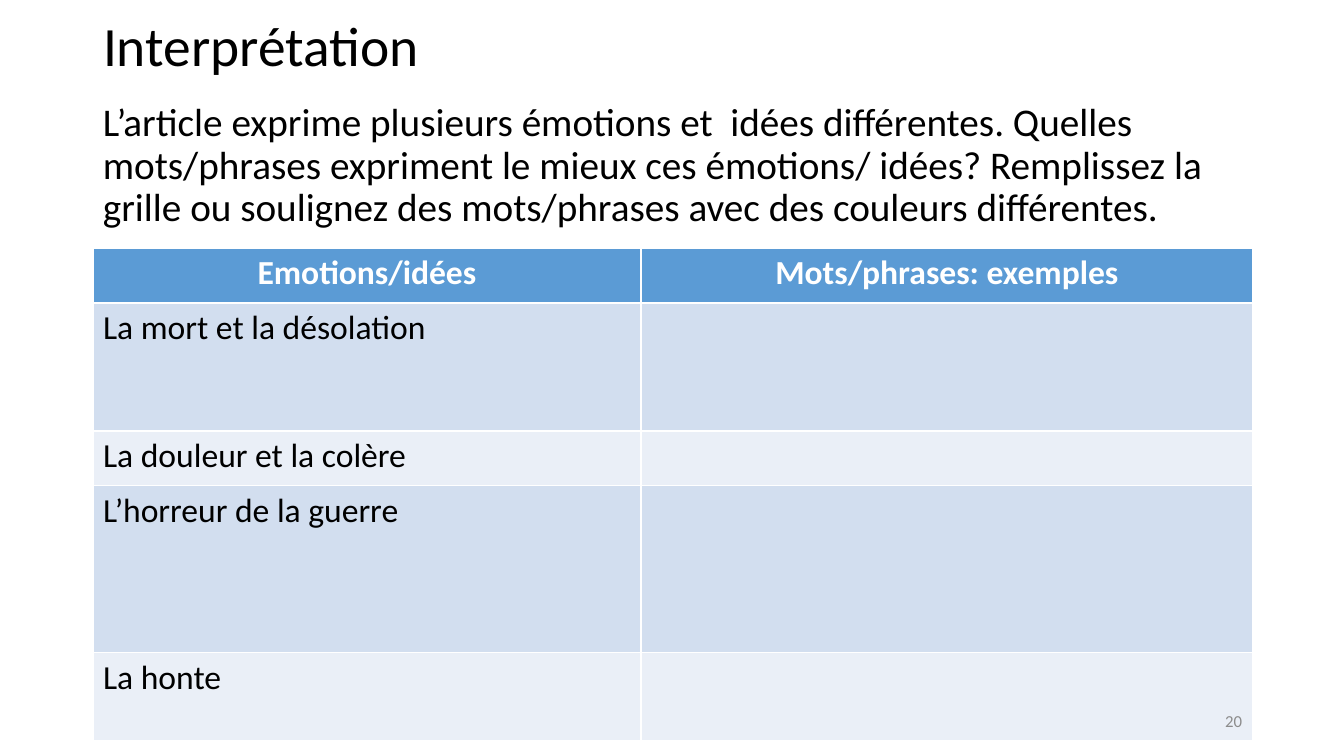
import pptx
import pptx.util
import pptx.dml.color
import pptx.enum.text
from dataclasses import dataclass

# Content
TITLE = "Interprétation"
TASK = (
    "L’article exprime plusieurs émotions et  idées différentes. "
    "Quelles mots/phrases expriment le mieux ces émotions/ idées? "
    "Remplissez la grille ou soulignez des mots/phrases avec des couleurs différentes."
)
HEADS = ["Emotions/idées", "Mots/phrases: exemples"]
IDEAS = [
    "La mort et la désolation",
    "La douleur et la colère",
    "L’horreur de la guerre",
    "La honte",
]
PAGE = "20"

# Lengths in px
SIZE = (1344, 756)
TITLE_BOX = (93, 28, 1159, 41)
TASK_BOX = (93, 98, 1159, 643)
PAGE_BOX = (950, 701, 302, 40)
GRID = (93, 248)
COLS = [548, 612]
ROWS = [55, 128, 55, 167, 88]


@dataclass(frozen=True)
class Theme:
    font: str = "Calibri"
    ink: str = "000000"
    pale: str = "FFFFFF"
    gray: str = "8C8C8C"
    head: str = "5B9BD5"
    bands: tuple = ("D2DEEF", "EAEFF7")
    title: float = 39.6
    task: int = 28
    cell: int = 24
    page: int = 12


THEME = Theme()
ALIGN = pptx.enum.text.PP_ALIGN
MIDDLE = pptx.enum.text.MSO_ANCHOR.MIDDLE


def px(n):
    return pptx.util.Emu(round(n * 914400 / 100.8))


def rgb(code):
    return pptx.dml.color.RGBColor.from_string(code)


def write(frame, text, size, color, align=ALIGN.LEFT, bold=False):
    frame.text = text
    para = frame.paragraphs[0]
    para.alignment = align
    para.font.name = THEME.font
    para.font.size = pptx.util.Pt(size)
    para.font.bold = bold
    para.font.color.rgb = rgb(color)
    return para


def place(shape, box):
    shape.left, shape.top, shape.width, shape.height = map(px, box)


def add_text(slide, box, *style):
    frame = slide.shapes.add_textbox(*map(px, box)).text_frame
    frame.word_wrap = True
    return frame, write(frame, *style)


def add_grid(slide):
    rows = [HEADS] + [[idea, ""] for idea in IDEAS]
    box = (*GRID, sum(COLS), sum(ROWS))
    table = slide.shapes.add_table(len(ROWS), len(COLS), *map(px, box)).table
    for col, width in zip(table.columns, COLS):
        col.width = px(width)
    for r, (row, height) in enumerate(zip(rows, ROWS)):
        table.rows[r].height = px(height)
        top = r == 0
        fill = THEME.head if top else THEME.bands[(r - 1) % 2]
        color = THEME.pale if top else THEME.ink
        align = ALIGN.CENTER if top else ALIGN.LEFT
        for c, text in enumerate(row):
            cell = table.cell(r, c)
            cell.fill.solid()
            cell.fill.fore_color.rgb = rgb(fill)
            write(cell.text_frame, text, THEME.cell, color, align, top)


def main():
    deck = pptx.Presentation()
    deck.slide_width, deck.slide_height = map(px, SIZE)
    slide = deck.slides.add_slide(deck.slide_layouts[5])

    # Title
    title = slide.shapes.title
    place(title, TITLE_BOX)
    frame = title.text_frame
    frame.auto_size = pptx.enum.text.MSO_AUTO_SIZE.NONE
    frame.vertical_anchor = MIDDLE
    write(frame, TITLE, THEME.title, THEME.ink).line_spacing = 0.9

    # Task
    _, para = add_text(slide, TASK_BOX, TASK, THEME.task, THEME.ink)
    para.line_spacing = 0.9
    para.space_before = pptx.util.Pt(10)

    # Table
    add_grid(slide)

    # Page number
    frame, _ = add_text(slide, PAGE_BOX, PAGE, THEME.page, THEME.gray, ALIGN.RIGHT)
    frame.vertical_anchor = MIDDLE

    deck.save("out.pptx")


if __name__ == "__main__":
    main()
